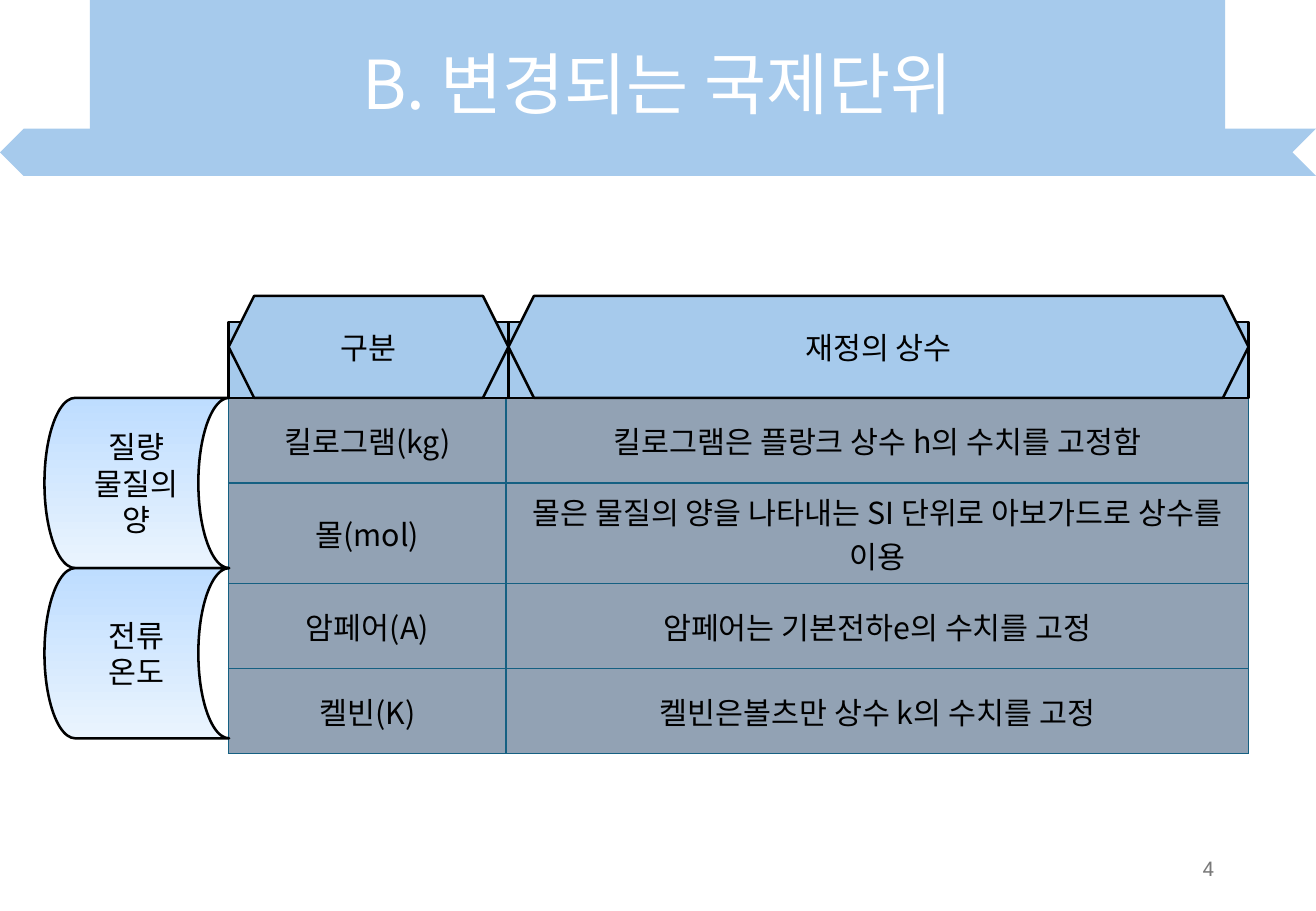
from dataclasses import dataclass

from lxml import etree
from pptx import Presentation
from pptx import util as u
from pptx.dml.color import RGBColor
from pptx.enum import shapes, text
from pptx.oxml import ns


@dataclass(frozen=True)
class Theme:
    font: str = "Noto Sans CJK KR"
    number_font: str = "Roboto"
    sky: str = "A6CAEC"
    cell: str = "92A2B4"
    grid: str = "156082"
    ink: str = "000000"
    white: str = "FFFFFF"
    grey: str = "797979"
    tab_top: str = "BEDDFF"
    tab_bottom: str = "EAF4FE"
    title_size: int = 40
    body_size: int = 18
    number_size: int = 12
    outline: float = 1.5
    grid_line: float = 1


@dataclass(frozen=True)
class Box:
    left: float
    top: float
    width: float
    height: float

    def lengths(self) -> list:
        return [u.Cm(v) for v in (self.left, self.top, self.width, self.height)]


@dataclass(frozen=True)
class Heading:
    label: str
    left: float
    width: float


@dataclass(frozen=True)
class Unit:
    name: str
    definition: str
    height: float = 1.78


THEME = Theme()
SLIDE_WIDTH, SLIDE_HEIGHT = 27.51, 19.05
RIBBON = Box(0, 2.69, SLIDE_WIDTH, 0.99)
BANNER = Box(1.88, 0, 23.73, 3.68)
TITLE = "B. 변경되는 국제단위"
TABLE_LEFT, TABLE_TOP = 4.78, 8.32
COLUMNS = (5.8, 15.52)
BAR_HEIGHT, HEXAGON_HEIGHT = 1.59, 2.13
TAB_LEFT, TAB_WIDTH, TAB_HEIGHT = 0.93, 3.86, 3.56
HEADINGS = (Heading("구분", 4.78, 5.85), Heading("재정의 상수", 10.63, 15.47))
UNITS = (
    Unit("킬로그램(kg)", "킬로그램은 플랑크 상수 h의 수치를 고정함"),
    Unit("몰(mol)", "몰은 물질의 양을 나타내는 SI 단위로 아보가드로 상수를 이용", 2.1),
    Unit("암페어(A)", "암페어는 기본전하e의 수치를 고정"),
    Unit("켈빈(K)", "켈빈은볼츠만 상수 k의 수치를 고정"),
)
QUANTITIES = (("질량", "물질의", "양"), ("전류", "온도"))


def write(frame, lines, size: int = THEME.body_size, colour: str = THEME.ink,
          font: str = THEME.font, align=text.PP_ALIGN.CENTER, spacing: float = 1) -> None:
    frame.word_wrap = True
    frame.vertical_anchor = text.MSO_ANCHOR.MIDDLE
    for index, line in enumerate(lines):
        paragraph = frame.add_paragraph() if index else frame.paragraphs[0]
        paragraph.text = line
        paragraph.alignment = align
        paragraph.line_spacing = spacing
        paragraph.font.size = u.Pt(size)
        paragraph.font.color.rgb = RGBColor.from_string(colour)
        paragraph.font.name = font
        defaults = paragraph._p.pPr.find(ns.qn("a:defRPr"))
        etree.SubElement(defaults, ns.qn("a:ea"), typeface=font)


def draw(slide, kind, box: Box, outlined: bool = True):
    shape = slide.shapes.add_shape(kind, *box.lengths())
    shape.shadow.inherit = False
    shape.fill.solid()
    shape.fill.fore_color.rgb = RGBColor.from_string(THEME.sky)
    if outlined:
        shape.line.color.rgb = RGBColor.from_string(THEME.ink)
        shape.line.width = u.Pt(THEME.outline)
    else:
        shape.line.fill.background()
    return shape


def draw_banner(slide) -> None:
    kinds = shapes.MSO_SHAPE
    for kind, box in ((kinds.CHEVRON, RIBBON), (kinds.FLOWCHART_MANUAL_INPUT, BANNER)):
        draw(slide, kind, box, outlined=False).rotation = 180
    title = slide.shapes.add_textbox(*BANNER.lengths())
    write(title.text_frame, [TITLE], THEME.title_size, THEME.white, spacing=0.9)


def border_cell(cell) -> None:
    properties = cell._tc.get_or_add_tcPr()
    for index, side in enumerate(("lnL", "lnR", "lnT", "lnB")):
        line = etree.Element(ns.qn(f"a:{side}"), w=str(u.Pt(THEME.grid_line)))
        fill = etree.SubElement(line, ns.qn("a:solidFill"))
        etree.SubElement(fill, ns.qn("a:srgbClr"), val=THEME.grid)
        properties.insert(index, line)


def draw_units(slide) -> None:
    box = Box(TABLE_LEFT, TABLE_TOP, sum(COLUMNS), sum(unit.height for unit in UNITS))
    units = slide.shapes.add_table(len(UNITS), len(COLUMNS), *box.lengths()).table
    units.first_row = units.horz_banding = False
    for column, width in zip(units.columns, COLUMNS):
        column.width = u.Cm(width)
    for row, unit in zip(units.rows, UNITS):
        row.height = u.Cm(unit.height)
        for cell, entry in zip(row.cells, (unit.name, unit.definition)):
            write(cell.text_frame, [entry])
            cell.vertical_anchor = text.MSO_ANCHOR.MIDDLE
            cell.fill.solid()
            cell.fill.fore_color.rgb = RGBColor.from_string(THEME.cell)
            border_cell(cell)


def draw_heading(slide, heading: Heading) -> None:
    bar = Box(heading.left, TABLE_TOP - BAR_HEIGHT, heading.width, BAR_HEIGHT)
    draw(slide, shapes.MSO_SHAPE.RECTANGLE, bar)
    front = Box(heading.left, TABLE_TOP - HEXAGON_HEIGHT, heading.width, HEXAGON_HEIGHT)
    hexagon = draw(slide, shapes.MSO_SHAPE.HEXAGON, front)
    write(hexagon.text_frame, [heading.label])


def draw_quantity(slide, index: int, lines) -> None:
    box = Box(TAB_LEFT, TABLE_TOP + index * TAB_HEIGHT, TAB_WIDTH, TAB_HEIGHT)
    tab = draw(slide, shapes.MSO_SHAPE.FLOWCHART_STORED_DATA, box)
    tab.fill.gradient()
    tab.fill.gradient_angle = 270
    for stop, colour in zip(tab.fill.gradient_stops, (THEME.tab_top, THEME.tab_bottom)):
        stop.color.rgb = RGBColor.from_string(colour)
    write(tab.text_frame, lines)


def main() -> None:
    deck = Presentation()
    deck.slide_width, deck.slide_height = u.Cm(SLIDE_WIDTH), u.Cm(SLIDE_HEIGHT)
    slide = deck.slides.add_slide(deck.slide_layouts[6])
    draw_banner(slide)
    draw_units(slide)
    for heading in HEADINGS:
        draw_heading(slide, heading)
    for index, lines in enumerate(QUANTITIES):
        draw_quantity(slide, index, lines)
    number = slide.shapes.add_textbox(*Box(19.43, 17.65, 6.2, 1.02).lengths())
    write(number.text_frame, ["4"], THEME.number_size, THEME.grey,
          THEME.number_font, text.PP_ALIGN.RIGHT)
    deck.save("out.pptx")


if __name__ == "__main__":
    main()
